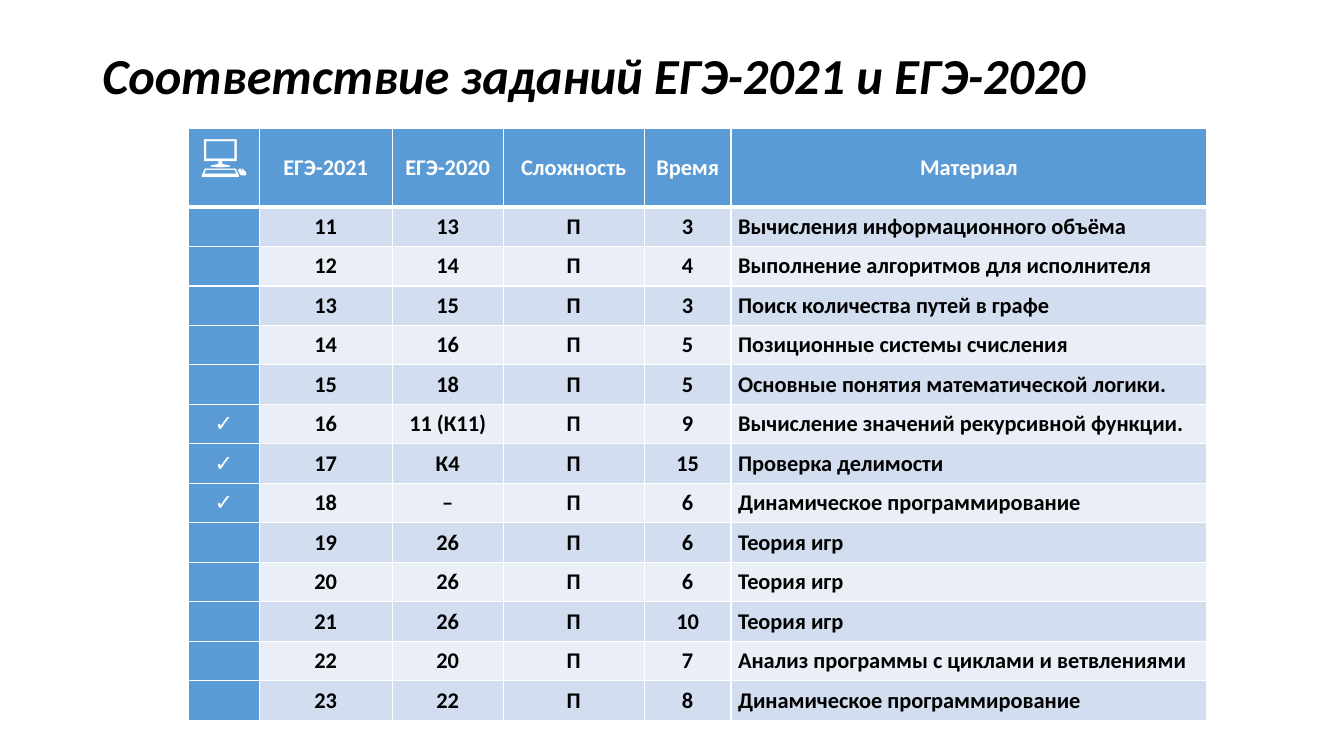
from lxml.etree import SubElement
from pptx import Presentation
from pptx.dml.color import RGBColor
from pptx.enum.text import MSO_ANCHOR, PP_ALIGN
from pptx.oxml.ns import qn
from pptx.util import Pt

COLORS = {
    "text": "000000",
    "white": "FFFFFF",
    "accent": "5B9BD5",
    "odd": "D2DEEF",
    "even": "EAEFF7",
}
COLUMN_WIDTHS = [50.4, 95, 79.2, 100.8, 62, 339.8]
ROW_HEIGHT = 28.22
HEADER = ["💻", "ЕГЭ-2021", "ЕГЭ-2020", "Сложность", "Время", "Материал"]
FIRST_TASK = 11
DIFFICULTY = "П"
COMPUTER_TASKS = {16, 17, 18}
# Task in 2020, minutes, topic
TASKS = [
    ("13", 3, "Вычисления информационного объёма"),
    ("14", 4, "Выполнение алгоритмов для исполнителя"),
    ("15", 3, "Поиск количества путей в графе"),
    ("16", 5, "Позиционные системы счисления"),
    ("18", 5, "Основные понятия математической логики."),
    ("11 (К11)", 9, "Вычисление значений рекурсивной функции."),
    ("К4", 15, "Проверка делимости"),
    ("–", 6, "Динамическое программирование"),
    ("26", 6, "Теория игр"),
    ("26", 6, "Теория игр"),
    ("26", 10, "Теория игр"),
    ("20", 7, "Анализ программы с циклами и ветвлениями"),
    ("22", 8, "Динамическое программирование"),
]


def write(frame, text, size=16, color="text", italic=False,
          align=PP_ALIGN.CENTER, line_spacing=None):
    para = frame.paragraphs[0]
    para.alignment = align
    para.line_spacing = line_spacing
    span = para.add_run()
    span.text = text
    font = span.font
    font.name = "Calibri"
    font.size = Pt(size)
    font.bold = True
    font.italic = italic
    font.color.rgb = RGBColor.from_string(COLORS[color])


def draw_borders(cell, top=1, bottom=1):
    """Give the cell white edges; call before the fill is set."""
    properties = cell._tc.get_or_add_tcPr()
    for side, width in {"L": 1, "R": 1, "T": top, "B": bottom}.items():
        line = SubElement(properties, qn(f"a:ln{side}"), w=str(Pt(width)))
        fill = SubElement(line, qn("a:solidFill"))
        SubElement(fill, qn("a:srgbClr"), val=COLORS["white"])


class TaskSlide:
    def __init__(self, deck):
        self.page = deck.slides.add_slide(deck.slide_layouts[6])

    def title(self, text, left, top, width, height):
        box = self.page.shapes.add_textbox(Pt(left), Pt(top), Pt(width), Pt(height))
        frame = box.text_frame
        frame.word_wrap = True
        frame.vertical_anchor = MSO_ANCHOR.TOP
        frame.margin_top = Pt(7.7)
        write(frame, text, size=36, italic=True, align=PP_ALIGN.LEFT, line_spacing=0.9)

    def table(self, rows, left, top):
        heights = [2 * ROW_HEIGHT] + [ROW_HEIGHT] * (len(rows) - 1)
        table = self.page.shapes.add_table(
            len(rows), len(COLUMN_WIDTHS), Pt(left), Pt(top),
            Pt(sum(COLUMN_WIDTHS)), Pt(sum(heights))).table
        table.horz_banding = False
        for column, width in zip(table.columns, COLUMN_WIDTHS):
            column.width = Pt(width)
        for row, height in zip(table.rows, heights):
            row.height = Pt(height)
        for row_index, values in enumerate(rows):
            for column_index, text in enumerate(values):
                self.cell(table.cell(row_index, column_index), text,
                          row_index, column_index)

    def cell(self, cell, text, row, column):
        is_header = row == 0
        is_accent = is_header or column == 0
        is_icon = is_header and column == 0
        is_topic = not is_header and column == len(COLUMN_WIDTHS) - 1
        draw_borders(cell, top=3 if row == 1 else 1, bottom=3 if is_header else 1)
        cell.fill.solid()
        band = "odd" if row % 2 else "even"
        cell.fill.fore_color.rgb = RGBColor.from_string(
            COLORS["accent" if is_accent else band])
        cell.margin_left = cell.margin_right = Pt(5)
        cell.margin_top = cell.margin_bottom = 0
        cell.vertical_anchor = MSO_ANCHOR.TOP if is_icon else MSO_ANCHOR.MIDDLE
        if text:
            write(cell.text_frame, text, size=32 if is_icon else 16,
                  color="white" if is_accent else "text",
                  align=PP_ALIGN.LEFT if is_topic else PP_ALIGN.CENTER)


def main():
    deck = Presentation()
    deck.slide_width, deck.slide_height = Pt(960), Pt(540)
    slide = TaskSlide(deck)
    slide.title("Соответствие заданий ЕГЭ-2021 и ЕГЭ-2020", 66, 28.8, 828, 104.4)
    rows = [HEADER]
    for number, (old_number, minutes, topic) in enumerate(TASKS, FIRST_TASK):
        mark = "✓" if number in COMPUTER_TASKS else ""
        rows.append([mark, str(number), old_number, DIFFICULTY, str(minutes), topic])
    slide.table(rows, 134.8, 91.4)
    deck.save("out.pptx")


if __name__ == "__main__":
    main()
